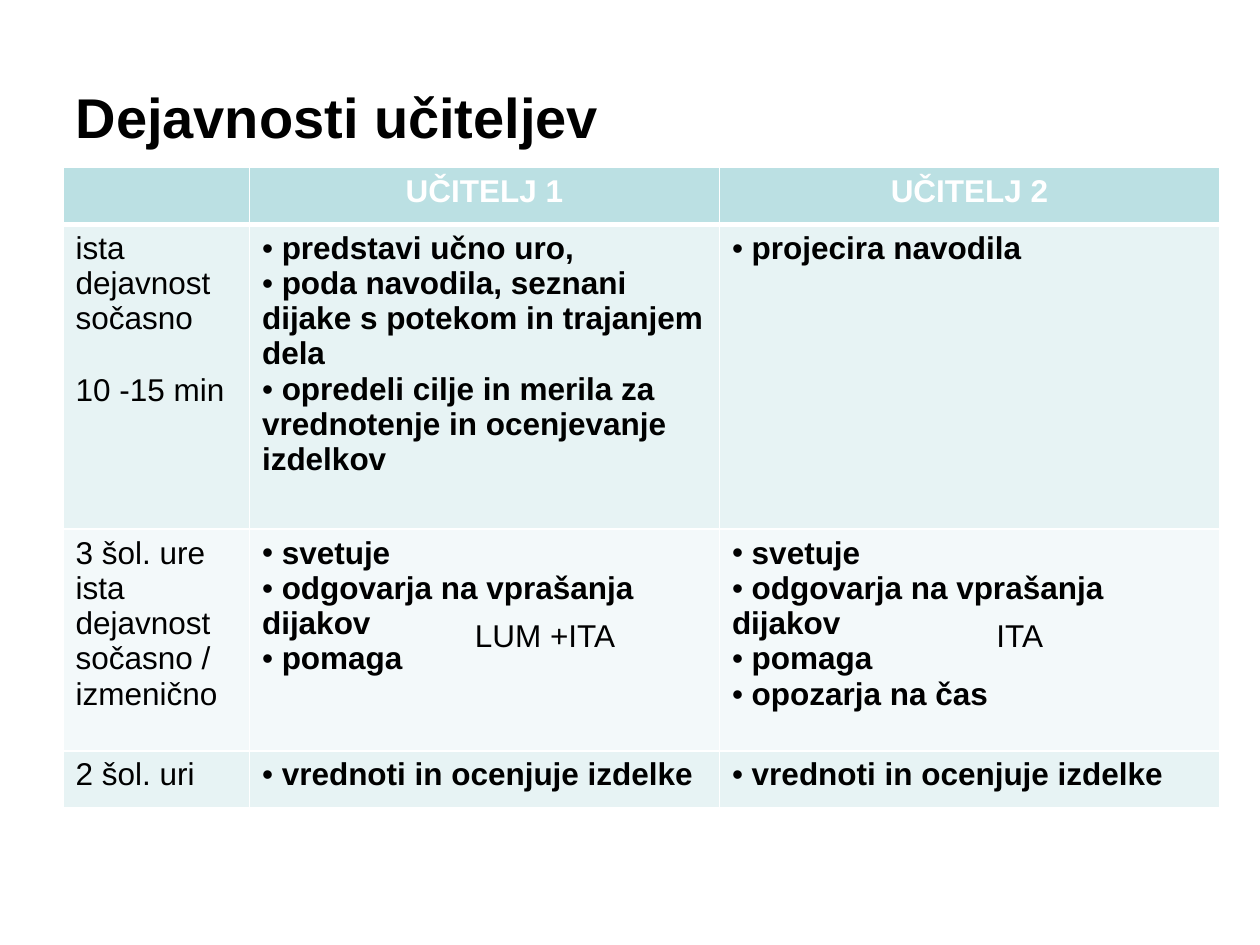
from lxml.etree import SubElement
from pptx import Presentation
from pptx.dml.color import RGBColor
from pptx.enum.text import MSO_ANCHOR, PP_ALIGN
from pptx.oxml.ns import qn
from pptx.util import Inches, Pt

TITLE = "Dejavnosti učiteljev"
HEADERS = ["", "UČITELJ 1", "UČITELJ 2"]
ASSESSMENT = ["vrednoti in ocenjuje izdelke"]
SUPPORT = ["svetuje", "odgovarja na vprašanja dijakov", "pomaga"]
ACTIVITIES = [
    (["ista dejavnost", "sočasno", "10 -15 min"],
     ["predstavi učno uro,",
      "poda navodila, seznani dijake s potekom in trajanjem dela",
      "opredeli cilje in merila za vrednotenje in ocenjevanje izdelkov"],
     ["projecira navodila"]),
    (["3 šol. ure", "ista dejavnost", "sočasno /", "izmenično"],
     SUPPORT, SUPPORT + ["opozarja na čas"]),
    (["2 šol. uri"], ASSESSMENT, ASSESSMENT),
]
SUBJECTS = [("LUM +ITA", 3.67, 1.48), ("ITA", 7.81, 1.09)]
COLUMN_WIDTHS = [1.48, 3.73, 3.97]
ROW_HEIGHTS = [0.45, 2.42, 1.76, 0.45]
HEADER_FILL = "BBE0E3"
BAND_FILLS = ["E7F3F4", "F3F9FA"]
SPACE_BEFORE = {"10 -15 min": 20.7}


def color(value):
    return RGBColor.from_string(value)


def format_font(paragraph, size=18, bold=False, fill="000000"):
    for name, value in {"name": "Arial", "size": Pt(size), "bold": bold}.items():
        setattr(paragraph.font, name, value)
    paragraph.font.color.rgb = color(fill)


def add_bullet(paragraph):
    properties = paragraph._p.get_or_add_pPr()
    properties.set("marL", "0")
    properties.set("indent", "0")
    SubElement(properties, qn("a:buFont"), typeface="Arial")
    SubElement(properties, qn("a:buChar"), char="•")


def set_borders(cell, top, bottom):
    properties = cell._tc.get_or_add_tcPr()
    widths = {"a:lnL": 1, "a:lnR": 1, "a:lnT": top, "a:lnB": bottom}
    for position, (tag, width) in enumerate(widths.items()):
        line = SubElement(properties, qn(tag), w=str(Pt(width)))
        fill = SubElement(line, qn("a:solidFill"))
        SubElement(fill, qn("a:srgbClr"), val="FFFFFF")
        properties.insert(position, line)


def fill_cell(cell, lines, row, column):
    header = row == 0
    cell.fill.solid()
    cell.fill.fore_color.rgb = color(HEADER_FILL if header else BAND_FILLS[(row - 1) % 2])
    set_borders(cell, 3 if row == 1 else 1, 3 if header else 1)
    bulleted = not header and column > 0
    frame = cell.text_frame
    for index, line in enumerate(lines):
        paragraph = frame.add_paragraph() if index else frame.paragraphs[0]
        paragraph.text = f" {line}" if bulleted else line
        if line in SPACE_BEFORE:
            paragraph.space_before = Pt(SPACE_BEFORE[line])
        if header:
            paragraph.alignment = PP_ALIGN.CENTER
        if bulleted:
            add_bullet(paragraph)
        format_font(paragraph, bold=header or bulleted, fill="FFFFFF" if header else "000000")


def add_title(slide):
    title = slide.shapes.title
    bounds = {"left": 0.5, "top": 0.3, "width": 9, "height": 1.25}
    for name, value in bounds.items():
        setattr(title, name, Inches(value))
    title.text_frame.text = TITLE
    title.text_frame.vertical_anchor = MSO_ANCHOR.MIDDLE
    paragraph = title.text_frame.paragraphs[0]
    paragraph.alignment = PP_ALIGN.LEFT
    format_font(paragraph, size=32, bold=True)


def add_activity_table(slide):
    table = slide.shapes.add_table(
        len(ROW_HEIGHTS), len(COLUMN_WIDTHS), Inches(0.5), Inches(1.33),
        Inches(sum(COLUMN_WIDTHS)), Inches(sum(ROW_HEIGHTS))).table
    for column, width in zip(table.columns, COLUMN_WIDTHS):
        column.width = Inches(width)
    for row, height in zip(table.rows, ROW_HEIGHTS):
        row.height = Inches(height)
    rows = [[[header] for header in HEADERS], *ACTIVITIES]
    for row, cells in enumerate(rows):
        for column, lines in enumerate(cells):
            fill_cell(table.cell(row, column), lines, row, column)


def add_subject(slide, text, left, width):
    box = slide.shapes.add_textbox(Inches(left), Inches(4.84), Inches(width), Inches(0.4))
    box.text_frame.word_wrap = True
    box.text_frame.text = text
    format_font(box.text_frame.paragraphs[0])


def main():
    presentation = Presentation()
    presentation.slide_width = Inches(10)
    presentation.slide_height = Inches(7.5)
    slide = presentation.slides.add_slide(presentation.slide_layouts[5])
    add_title(slide)
    add_activity_table(slide)
    for subject in SUBJECTS:
        add_subject(slide, *subject)
    presentation.save("out.pptx")


if __name__ == "__main__":
    main()
